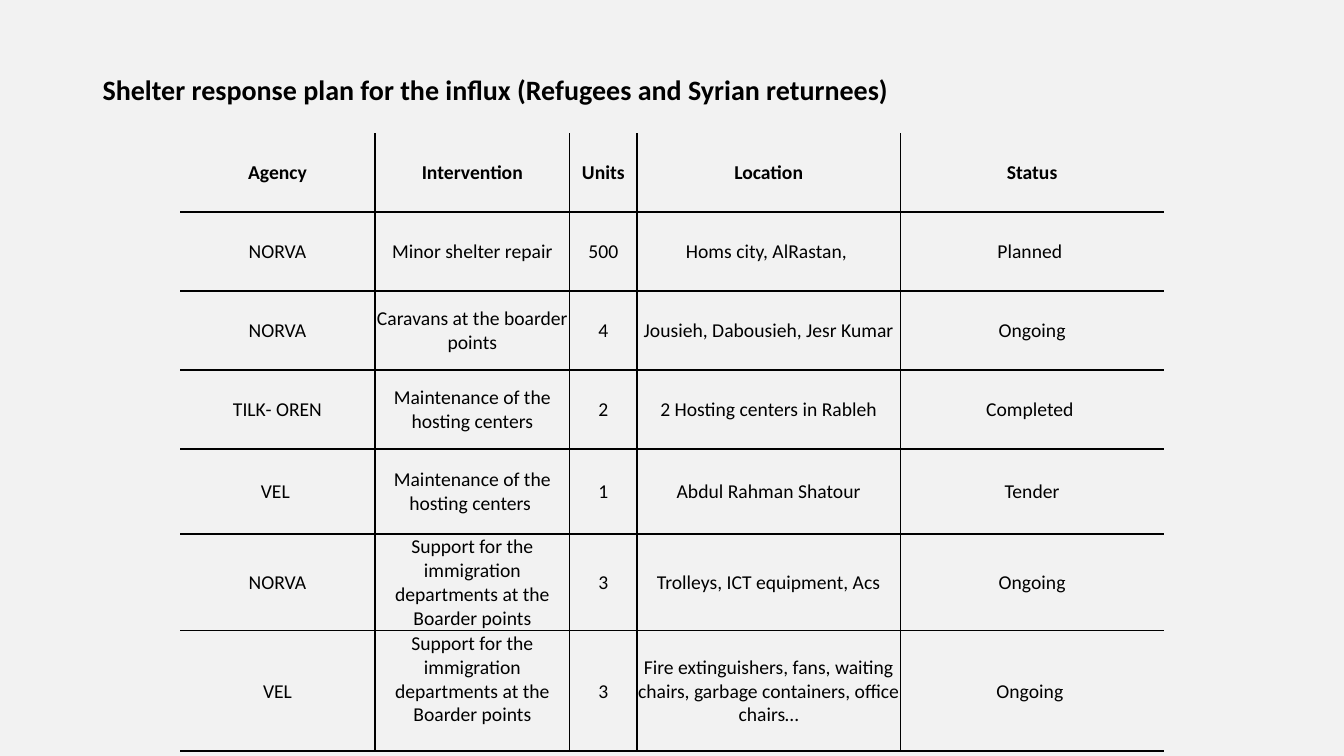
from dataclasses import dataclass
from typing import NamedTuple

from lxml import etree
from pptx import Presentation
from pptx.dml.color import RGBColor
from pptx.enum.text import MSO_ANCHOR, PP_ALIGN
from pptx.oxml.ns import qn
from pptx.util import Inches, Pt

MIDDLE = MSO_ANCHOR.MIDDLE
CENTER = PP_ALIGN.CENTER

SLIDE_WIDTH = Inches(13.333)
SLIDE_HEIGHT = Inches(7.5)


@dataclass(frozen=True)
class Theme:
    font: str = "Calibri"
    ink: str = "000000"
    paper: str = "F2F2F2"
    title_size: int = 20
    body_size: int = 14
    rule_width: int = 1


class Activity(NamedTuple):
    agency: str
    intervention: str
    units: str
    location: str
    status: str


class Area(NamedTuple):
    """Left, top, width and height in percent of the slide."""
    left: float
    top: float
    width: float
    height: float


THEME = Theme()

TITLE = "Shelter response plan for the influx (Refugees and Syrian returnees)"
HEADINGS = Activity("Agency", "Intervention", "Units", "Location", "Status")
BORDER_SUPPORT = "Support for the immigration departments at the Boarder points"
ACTIVITIES = [
    Activity("NORVA", "Minor shelter repair", "500", "Homs city, AlRastan, ", "Planned "),
    Activity("NORVA", "Caravans at the boarder points", "4",
             "Jousieh, Dabousieh, Jesr Kumar", "Ongoing"),
    Activity("TILK- OREN", "Maintenance of the hosting centers", "2",
             "2 Hosting centers in Rableh", "Completed "),
    Activity("VEL ", "Maintenance of the hosting centers ", "1",
             "Abdul Rahman Shatour", "Tender"),
    Activity("NORVA", BORDER_SUPPORT, "3", "Trolleys, ICT equipment, Acs", "Ongoing"),
    Activity("VEL", BORDER_SUPPORT, "3",
             "Fire extinguishers, fans, waiting chairs, garbage containers, office chairs…",
             "Ongoing "),
]

# Grid, in percent of the slide
COLUMN_SHARES = [14.5, 14.5, 5, 19.6, 19.6]
ROW_SHARES = [10.45] * 4 + [11.25, 12.8, 15.9]
TITLE_AREA = Area(6.9, 2.4, 86.2, 19.3)
PLAN_AREA = Area(13.4, 17.6, sum(COLUMN_SHARES), sum(ROW_SHARES))
CELL_INSET = Inches(0.01)
LAST_INTERVENTION_INSET = Inches(0.24)


def across(share: float) -> int:
    return int(SLIDE_WIDTH * share / 100)


def down(share: float) -> int:
    return int(SLIDE_HEIGHT * share / 100)


def place(area: Area) -> tuple[int, int, int, int]:
    return across(area.left), down(area.top), across(area.width), down(area.height)


def style_font(font, size: int, bold: bool) -> None:
    font.name = THEME.font
    font.size = Pt(size)
    font.bold = bold
    font.color.rgb = RGBColor.from_string(THEME.ink)


def rule_cell(cell, ruled_sides: dict[str, bool]) -> None:
    """Draw the ruled sides and clear the others; keys run in schema order."""
    properties = cell._tc.get_or_add_tcPr()
    for position, (side, ruled) in enumerate(ruled_sides.items()):
        rule = etree.Element(qn(f"a:ln{side}"), w=str(Pt(THEME.rule_width)))
        if ruled:
            ink = etree.SubElement(rule, qn("a:solidFill"))
            etree.SubElement(ink, qn("a:srgbClr"), val=THEME.ink)
        else:
            etree.SubElement(rule, qn("a:noFill"))
        properties.insert(position, rule)


def fill_cell(cell, wording: str, bold: bool) -> None:
    cell.fill.solid()
    cell.fill.fore_color.rgb = RGBColor.from_string(THEME.paper)
    cell.vertical_anchor = MIDDLE
    cell.margin_left = cell.margin_right = cell.margin_top = CELL_INSET
    cell.margin_bottom = 0
    cell.text = wording
    paragraph = cell.text_frame.paragraphs[0]
    paragraph.alignment = CENTER
    style_font(paragraph.font, THEME.body_size, bold)


def add_title(slide) -> None:
    frame = slide.shapes.add_textbox(*place(TITLE_AREA)).text_frame
    frame.word_wrap = True
    frame.vertical_anchor = MIDDLE
    heading = frame.paragraphs[0]
    heading.text = TITLE
    heading.line_spacing = 0.9
    style_font(heading.font, THEME.title_size, True)


def add_plan(slide) -> None:
    lines = [HEADINGS, *ACTIVITIES]
    plan = slide.shapes.add_table(
        len(lines), len(HEADINGS), *place(PLAN_AREA)).table
    plan.horz_banding = False

    for column, share in zip(plan.columns, COLUMN_SHARES):
        column.width = across(share)
    for row, share in zip(plan.rows, ROW_SHARES):
        row.height = down(share)

    # Rules run between cells and under the last row
    last_column = len(HEADINGS) - 1
    for row_index, line in enumerate(lines):
        for column_index, wording in enumerate(line):
            cell = plan.cell(row_index, column_index)
            fill_cell(cell, wording, bold=row_index == 0)
            rule_cell(cell, {"L": column_index > 0, "R": column_index < last_column,
                             "T": row_index > 0, "B": True})

    # The last intervention sits a little above the middle of its row
    last_intervention = plan.cell(len(lines) - 1, HEADINGS.index("Intervention"))
    last_intervention.margin_bottom = LAST_INTERVENTION_INSET


def main() -> None:
    presentation = Presentation()
    presentation.slide_width = SLIDE_WIDTH
    presentation.slide_height = SLIDE_HEIGHT
    slide = presentation.slides.add_slide(presentation.slide_layouts[6])
    slide.background.fill.solid()
    slide.background.fill.fore_color.rgb = RGBColor.from_string(THEME.paper)
    add_title(slide)
    add_plan(slide)
    presentation.save("out.pptx")


if __name__ == "__main__":
    main()
